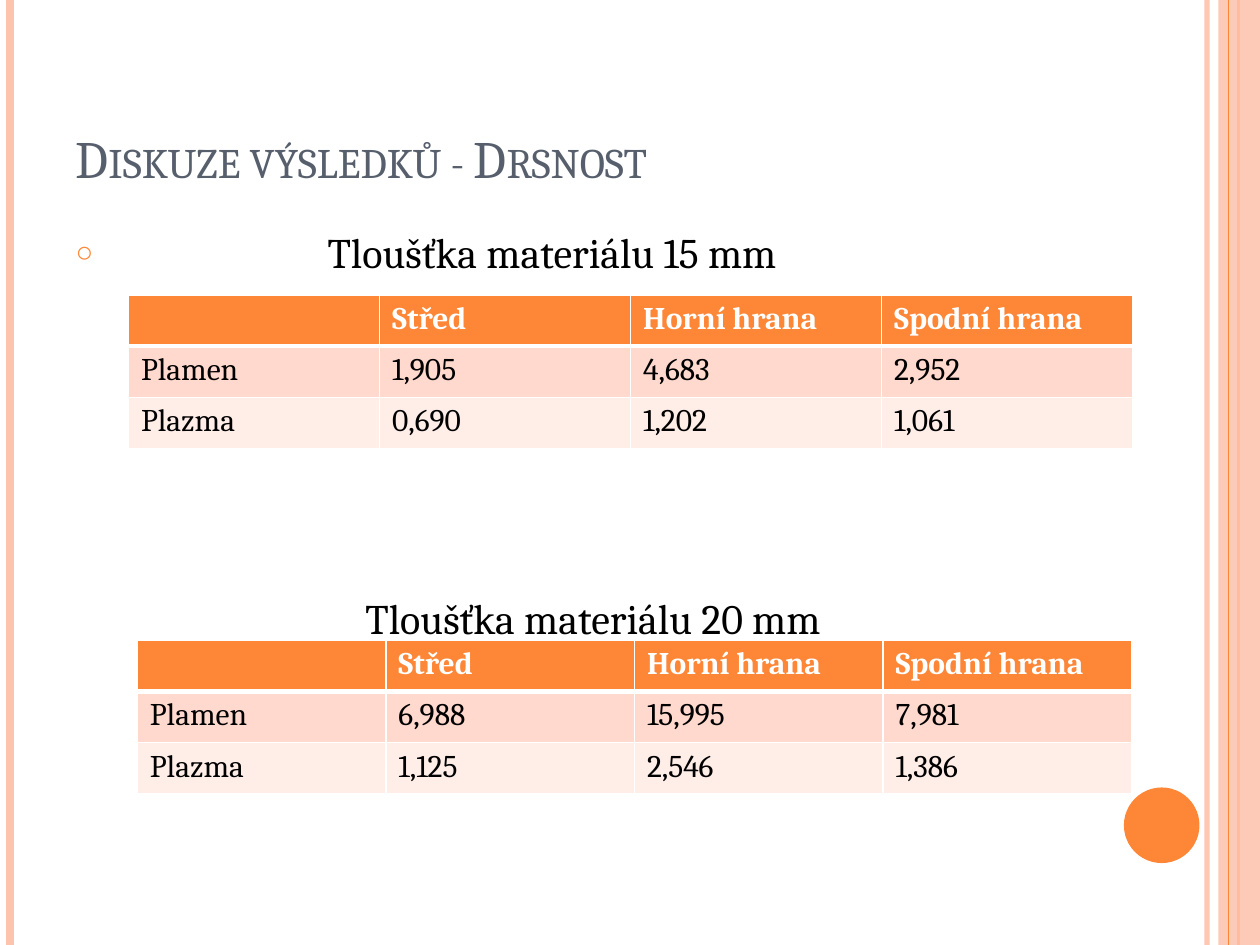
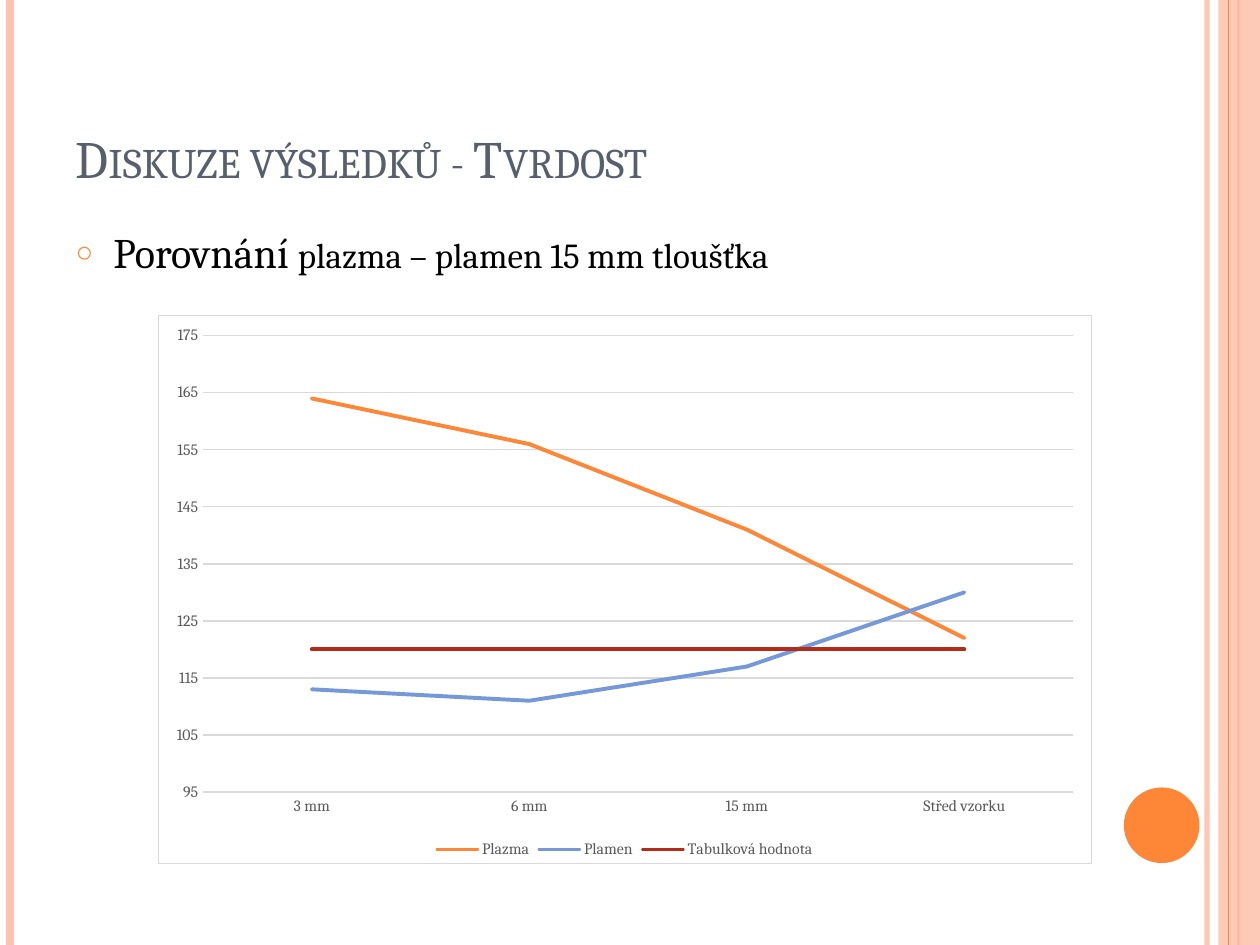
import pptx
import pptx.chart.data
import pptx.dml.color
import pptx.enum.chart
import pptx.enum.shapes
import pptx.enum.text
import pptx.oxml
import pptx.oxml.ns
import pptx.util
import lxml.etree

Inches, Pt = pptx.util.Inches, pptx.util.Pt
qn = pptx.oxml.ns.qn
FONT = "Cambria"
ORANGE, PEACH, SLATE = "FE8637", "FEC3AE", "575F6D"
WHITE, BLACK, GREY, PALE_GREY = "FFFFFF", "000000", "595959", "D9D9D9"
NSDECLS = pptx.oxml.ns.nsdecls("a", "c")


def rgb(hex_colour):
    return pptx.dml.color.RGBColor.from_string(hex_colour)


def set_format(target, values):
    """Set each named attribute; a colour is given as a hex string."""
    for name, value in values.items():
        if name == "color":
            target.color.rgb = rgb(value)
        else:
            setattr(target, name, value)


TITLE_FONT = {"name": FONT, "size": Pt(30), "color": SLATE}
BODY_FONT = {"name": FONT, "size": Pt(24), "color": BLACK}
HEADER_FONT = {"name": FONT, "size": Pt(18), "color": WHITE, "bold": True}
CELL_FONT = {"name": FONT, "size": Pt(18), "color": BLACK, "bold": False}
CHART_FONT = {"name": FONT, "size": Pt(9), "color": GREY}
GRID_LINE = {"color": PALE_GREY, "width": Pt(0.75)}

presentation = pptx.Presentation()
presentation.slide_width, presentation.slide_height = Inches(10), Inches(7.5)
layout = presentation.slide_layouts[1]

# Title and lists: wording, size and text start of each paragraph
slide_texts = [
    ("Diskuze výsledků - Drsnost", [
        {"runs": [("Tloušťka materiálu 15 mm", 24)], "start": 2, "bullet": True, "before": 6},
        {"runs": [("Tloušťka materiálu 20 mm", 24)], "start": 2.3, "bullet": False, "before": 180},
    ]),
    ("Diskuze výsledků - Tvrdost", [
        {"runs": [("Porovnání ", 24), ("plazma – plamen 15 mm tloušťka", 20)],
         "start": 0.3, "bullet": True, "before": 6},
    ]),
]
slides = []
for heading, items in slide_texts:
    slide = presentation.slides.add_slide(layout)
    slides.append(slide)
    title, body = slide.placeholders
    set_format(title, {"left": Inches(0.5), "top": Inches(0.3),
                       "width": Inches(8.17), "height": Inches(1.25)})
    set_format(body, {"left": Inches(0.5), "top": Inches(1.75),
                      "width": Inches(8.17), "height": Inches(5.33)})
    for frame, anchor in ((title.text_frame, "BOTTOM"), (body.text_frame, "TOP")):
        frame.vertical_anchor = pptx.enum.text.MSO_ANCHOR[anchor]
        frame.auto_size = pptx.enum.text.MSO_AUTO_SIZE.NONE

    title_line = title.text_frame.paragraphs[0]
    title_line.alignment = pptx.enum.text.PP_ALIGN.LEFT
    title_run = title_line.add_run()
    title_run.text = heading
    set_format(title_run.font, TITLE_FONT)
    title_run._r.get_or_add_rPr().set("cap", "small")

    for index, item in enumerate(items):
        line = body.text_frame.add_paragraph() if index else body.text_frame.paragraphs[0]
        line.space_before = Pt(item["before"])
        properties = line._p.get_or_add_pPr()
        start = Inches(item["start"])
        properties.set("marL", str(start))
        properties.set("indent", str(-start if item["bullet"] else 0))
        if item["bullet"]:
            colour = lxml.etree.SubElement(properties, qn("a:buClr"))
            lxml.etree.SubElement(colour, qn("a:srgbClr")).set("val", ORANGE)
            lxml.etree.SubElement(properties, qn("a:buSzPct")).set("val", "70000")
            lxml.etree.SubElement(properties, qn("a:buChar")).set("char", "○")
        else:
            lxml.etree.SubElement(properties, qn("a:buNone"))
        for words, size in item["runs"]:
            run = line.add_run()
            run.text = words
            set_format(run.font, {**BODY_FONT, "size": Pt(size)})

roughness_slide, hardness_slide = slides

# Bands and disc, drawn once and moved to the shared layout
decoration = []
for x, colour, width, opacity in (
    (9.58, PEACH, 3, 93),
    (0.08, PEACH, 4.5, 100),
    (9.83, ORANGE, 1.5, 100),
    (9.75, ORANGE, 0.75, 100),
):
    stripe = roughness_slide.shapes.add_connector(
        pptx.enum.shapes.MSO_CONNECTOR.STRAIGHT, Inches(x), 0, Inches(x), Inches(7.5))
    set_format(stripe.line, {"color": colour, "width": Pt(width)})
    lxml.etree.SubElement(stripe._element.spPr, qn("a:effectLst"))
    decoration.append((stripe, opacity))
for kind, box, colour, opacity in (
    ("RECTANGLE", (9.67, 0, 0.33, 7.5), PEACH, 87),
    ("OVAL", (8.92, 6.25, 0.6, 0.6), ORANGE, 100),
):
    accent = roughness_slide.shapes.add_shape(
        pptx.enum.shapes.MSO_SHAPE[kind], *map(Inches, box))
    accent.shadow.inherit = False
    accent.fill.solid()
    accent.fill.fore_color.rgb = rgb(colour)
    accent.line.fill.background()
    # The band lies under the thin line at its inner edge
    decoration.insert(3 if kind == "RECTANGLE" else len(decoration), (accent, opacity))
for index, (part, opacity) in enumerate(decoration):
    element = part._element
    if opacity < 100:
        tint = element.spPr.find(".//" + qn("a:srgbClr"))
        lxml.etree.SubElement(tint, qn("a:alpha")).set("val", str(opacity * 1000))
    element.find(".//" + qn("p:cNvPr")).set("id", str(100 + index))
    layout.shapes.element.insert(2 + index, element)

# Roughness tables
HEADER = ("", "Střed", "Horní hrana", "Spodní hrana")
ROW_FILLS = (ORANGE, "FFD9CE", "FFEDE8")
roughness_tables = [
    ((1.09, 5.08, 7.89), [("Plamen", "6,988", "15,995", "7,981"),
                          ("Plazma", "1,125", "2,546", "1,386")]),
    ((1.02, 2.34, 7.97), [("Plamen", "1,905", "4,683", "2,952"),
                          ("Plazma", "0,690", "1,202", "1,061")]),
]
for (left, top, width), measurements in roughness_tables:
    rows = [HEADER, *measurements]
    roughness = roughness_slide.shapes.add_table(
        len(rows), len(HEADER), Inches(left), Inches(top),
        Inches(width), Inches(1.22)).table
    for r, row in enumerate(rows):
        for c, words in enumerate(row):
            cell = roughness.cell(r, c)
            cell.fill.solid()
            cell.fill.fore_color.rgb = rgb(ROW_FILLS[r])
            if words:
                cell.text = words
                set_format(cell.text_frame.paragraphs[0].runs[0].font,
                           CELL_FONT if r else HEADER_FONT)
            for position, side in enumerate("LRTB"):
                under_header = (r, side) in ((0, "B"), (1, "T"))
                border = pptx.oxml.parse_xml(
                    f'<a:ln{side} {NSDECLS} w="{Pt(3 if under_header else 1)}">'
                    f'<a:solidFill><a:srgbClr val="{WHITE}"/></a:solidFill></a:ln{side}>')
                cell._tc.get_or_add_tcPr().insert(position, border)

# Hardness chart
hardness_data = pptx.chart.data.CategoryChartData()
hardness_data.categories = ["3 mm", "6 mm", "15 mm", "Střed vzorku"]
hardness_series = (
    ("Plazma", (164, 156, 141, 122), ORANGE),
    ("Plamen", (113, 111, 117, 130), "7598D9"),
    ("Tabulková hodnota", (120, 120, 120, 120), "B32C16"),
)
for name, values, _ in hardness_series:
    hardness_data.add_series(name, values)
hardness = hardness_slide.shapes.add_chart(
    pptx.enum.chart.XL_CHART_TYPE.LINE, Inches(1.25), Inches(2.5),
    Inches(7.42), Inches(4.36), hardness_data).chart
set_format(hardness, {"has_title": False, "has_legend": True})
set_format(hardness.font, {"name": FONT, "size": Pt(10), "color": BLACK})
set_format(hardness.legend, {"position": pptx.enum.chart.XL_LEGEND_POSITION.BOTTOM,
                             "include_in_layout": False})
set_format(hardness.legend.font, CHART_FONT)
hardness.plots[0].vary_by_categories = False
for series, (_, _, colour) in zip(hardness.plots[0].series, hardness_series):
    series.smooth = False
    set_format(series.format.line, {"color": colour, "width": Pt(2.25)})
    series.format.line._get_or_add_ln().set("cap", "rnd")

# Chart axes and frame
depth_axis, hardness_axis = hardness.category_axis, hardness.value_axis
for axis in (depth_axis, hardness_axis):
    set_format(axis, {"major_tick_mark": pptx.enum.chart.XL_TICK_MARK.NONE,
                      "minor_tick_mark": pptx.enum.chart.XL_TICK_MARK.NONE})
    set_format(axis.tick_labels.font, CHART_FONT)
set_format(hardness_axis, {"minimum_scale": 95, "maximum_scale": 175,
                           "major_unit": 10, "has_major_gridlines": True})
set_format(hardness_axis.major_gridlines.format.line, GRID_LINE)
set_format(depth_axis.format.line, GRID_LINE)
hardness_axis.format.line.fill.background()
chart_space = hardness.element
chart_space.insert(1, pptx.oxml.parse_xml(f'<c:roundedCorners {NSDECLS} val="0"/>'))
chart_space.find(qn("c:txPr")).addprevious(pptx.oxml.parse_xml(
    f'<c:spPr {NSDECLS}><a:solidFill><a:srgbClr val="{WHITE}"/></a:solidFill>'
    f'<a:ln w="{Pt(0.75)}"><a:solidFill><a:srgbClr val="{PALE_GREY}"/></a:solidFill>'
    '</a:ln></c:spPr>'))

presentation.save("out.pptx")
